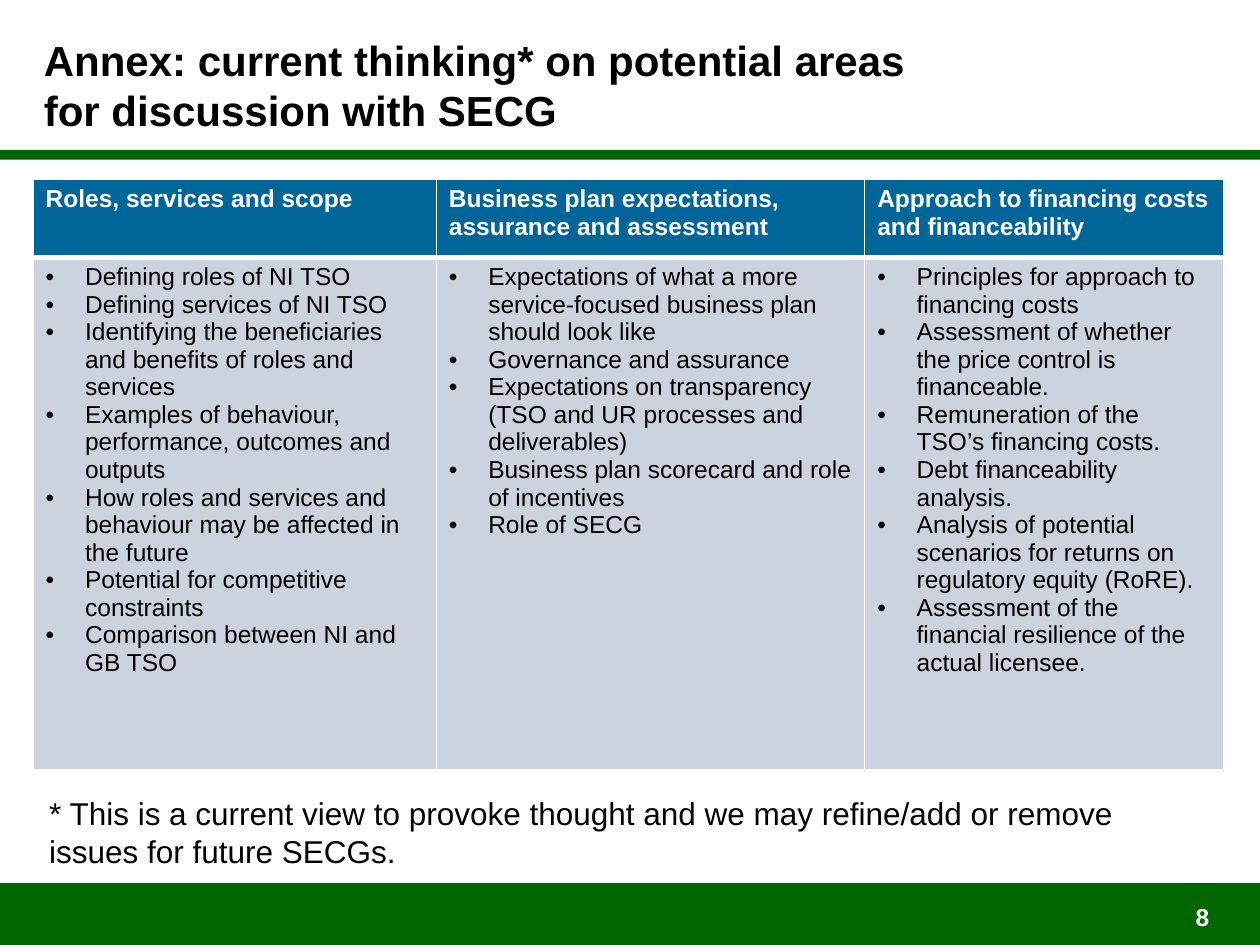
from lxml import etree
from pptx import Presentation
from pptx.dml.color import RGBColor
from pptx.enum.shapes import MSO_SHAPE
from pptx.enum.text import MSO_ANCHOR, PP_ALIGN
from pptx.oxml.ns import qn
from pptx.util import Pt

RECTANGLE = MSO_SHAPE.RECTANGLE
TOP, MIDDLE = MSO_ANCHOR.TOP, MSO_ANCHOR.MIDDLE
LEFT, RIGHT = PP_ALIGN.LEFT, PP_ALIGN.RIGHT

COLOURS = {
    "green": "006600",
    "header": "006699",
    "body": "CCD3DE",
    "white": "FFFFFF",
    "black": "000000",
}
BULLET_INDENT = 22.5
COLUMN_WIDTHS = [230.4, 244.8, 205.2]
ROW_HEIGHTS = [44.6, 293]
AREAS = {
    "Roles, services and scope": [
        "Defining roles of NI TSO",
        "Defining services of NI TSO",
        "Identifying the beneficiaries and benefits of roles and services",
        "Examples of behaviour, performance, outcomes and outputs",
        "How roles and services and behaviour may be affected in the future",
        "Potential for competitive constraints",
        "Comparison between NI and GB TSO",
    ],
    "Business plan expectations, assurance and assessment": [
        "Expectations of what a more service-focused business plan should look like",
        "Governance and assurance",
        "Expectations on transparency (TSO and UR processes and deliverables)",
        "Business plan scorecard and role of incentives",
        "Role of SECG",
    ],
    "Approach to financing costs and financeability": [
        "Principles for approach to financing costs",
        "Assessment of whether the price control is financeable.",
        "Remuneration of the TSO’s financing costs.",
        "Debt financeability analysis.",
        "Analysis of potential scenarios for returns on regulatory equity (RoRE).",
        "Assessment of the financial resilience of the actual licensee.",
    ],
}


def colour(name):
    return RGBColor.from_string(COLOURS[name])


class SlideBuilder:
    def __init__(self, page, font="Arial"):
        self.page = page
        self.font = font

    def format_font(self, para, size, colour_name, bold=False):
        values = {"name": self.font, "size": Pt(size), "bold": bold}
        for name, value in values.items():
            setattr(para.font, name, value)
        para.font.color.rgb = colour(colour_name)

    def band(self, top, height):
        page_width = 720
        shape = self.page.shapes.add_shape(RECTANGLE, 0, Pt(top), Pt(page_width), Pt(height))
        shape.shadow.inherit = False
        shape.fill.solid()
        shape.fill.fore_color.rgb = colour("green")
        shape.line.fill.background()

    def text(self, words, place, size, colour_name, bold=False, align=LEFT, anchor=TOP):
        box = self.page.shapes.add_textbox(*map(Pt, place))
        frame = box.text_frame
        frame.word_wrap = True
        frame.vertical_anchor = anchor
        para = frame.paragraphs[0]
        para.text = words
        para.alignment = align
        self.format_font(para, size, colour_name, bold)

    def bullet(self, para):
        properties = para._p.get_or_add_pPr()
        properties.set("marL", str(Pt(BULLET_INDENT)))
        properties.set("indent", str(-Pt(BULLET_INDENT)))
        etree.SubElement(properties, qn("a:buFont"), typeface=self.font)
        etree.SubElement(properties, qn("a:buChar"), char="•")

    def borders(self, cell, widths):
        """Draw white cell edges; widths maps an edge letter (L, R, T, B) to points."""
        properties = cell._tc.get_or_add_tcPr()
        for position, (edge, width) in enumerate(widths.items()):
            line = etree.Element(qn(f"a:ln{edge}"), w=str(Pt(width)))
            fill = etree.SubElement(line, qn("a:solidFill"))
            etree.SubElement(fill, qn("a:srgbClr"), val=COLOURS["white"])
            properties.insert(position, line)

    def cell(self, cell, lines, fill, text_colour, edges, bold=False, bulleted=False):
        cell.fill.solid()
        cell.fill.fore_color.rgb = colour(fill)
        self.borders(cell, edges)
        frame = cell.text_frame
        frame.text = "\n".join(lines)
        for para in frame.paragraphs:
            if bulleted:
                self.bullet(para)
            self.format_font(para, 14, text_colour, bold)

    def table(self, areas, left, top):
        frame = self.page.shapes.add_table(
            2, len(areas), Pt(left), Pt(top), Pt(sum(COLUMN_WIDTHS)), Pt(sum(ROW_HEIGHTS))
        )
        table = frame.table
        for column, width in zip(table.columns, COLUMN_WIDTHS):
            column.width = Pt(width)
        for row, height in zip(table.rows, ROW_HEIGHTS):
            row.height = Pt(height)
        header_edges = {"L": 1, "R": 1, "T": 1, "B": 3}
        body_edges = {"L": 1, "R": 1, "T": 3, "B": 1}
        for index, (heading, points) in enumerate(areas.items()):
            self.cell(table.cell(0, index), [heading], "header", "white", header_edges, bold=True)
            self.cell(table.cell(1, index), points, "body", "black", body_edges, bulleted=True)


def main():
    deck = Presentation()
    deck.slide_width, deck.slide_height = Pt(720), Pt(540)
    blank_layout = deck.slide_layouts[6]
    builder = SlideBuilder(deck.slides.add_slide(blank_layout))

    builder.band(top=504.7, height=35.3)
    builder.band(top=85.7, height=5.6)
    builder.text(
        "Annex: current thinking* on potential areas for discussion with SECG",
        (18, 26, 512, 45), 24, "black", bold=True, anchor=MIDDLE,
    )
    builder.table(AREAS, left=18.9, top=102.4)
    builder.text("8", (530, 512, 168, 28), 14, "white", bold=True, align=RIGHT)
    builder.text(
        "* This is a current view to provoke thought and we may refine/add or remove "
        "issues for future SECGs.",
        (21, 450, 677, 51), 18, "black",
    )
    deck.save("out.pptx")


if __name__ == "__main__":
    main()
